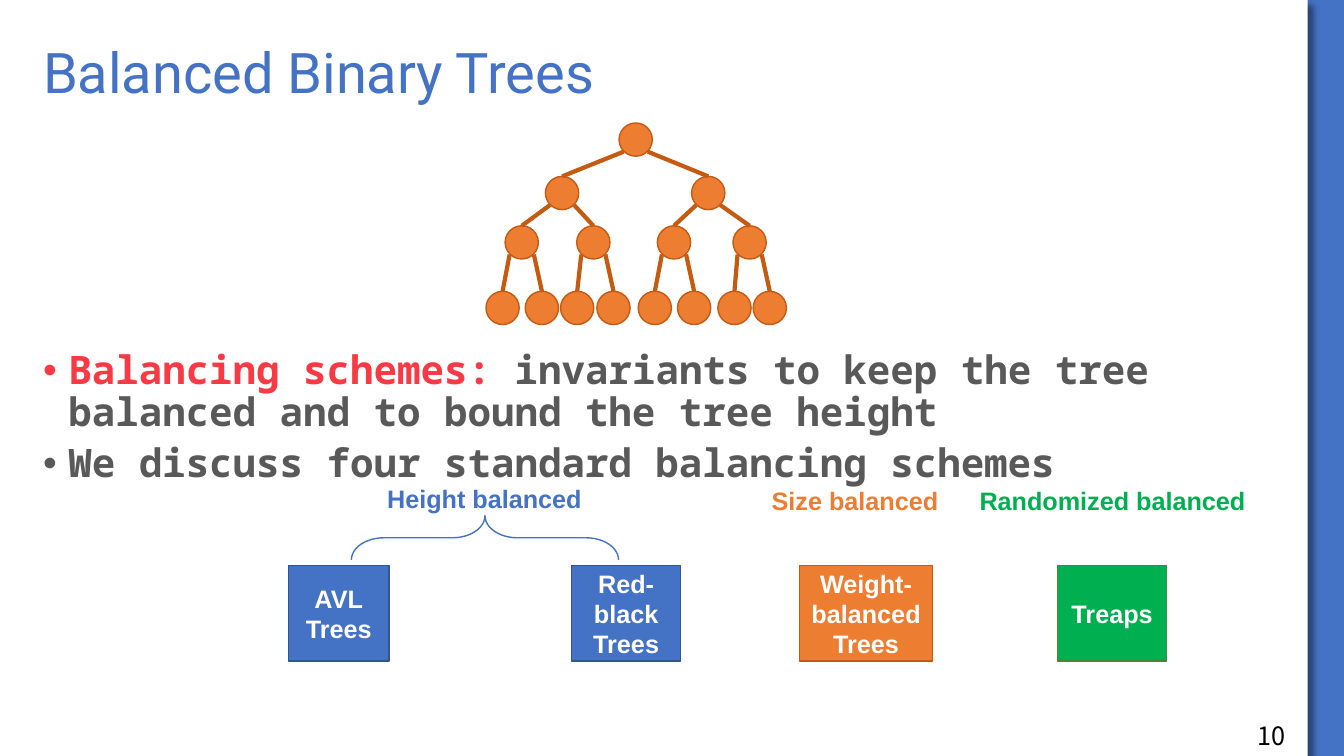
"""Build a slide on balanced binary trees and their balancing schemes."""
from dataclasses import dataclass

from lxml import etree
from pptx import Presentation
from pptx.dml.color import RGBColor
from pptx.enum.shapes import MSO_CONNECTOR as Link, MSO_SHAPE as Kind
from pptx.enum.text import MSO_ANCHOR as Anchor, PP_ALIGN as Align
from pptx.oxml.ns import qn
from pptx.util import Inches, Pt

BLUE, ORANGE, GREEN = "4472C4", "ED7D31", "00B050"
RUST, WHITE, RED, GRAY = "C55A11", "FFFFFF", "F93943", "595959"
NODE = 0.33
REACH = 0.12
BOX_TOP, BOX_TALL = 5.61, 0.95


@dataclass
class Level:
    top: float
    lefts: list[float]


@dataclass
class Scheme:
    text: str
    left: float
    width: float
    fill: str
    edge: str


@dataclass
class Label:
    text: str
    left: float
    top: float
    width: float
    height: float
    color: str
    size: int = 18
    face: str = "Arial"
    bold: bool = True
    align: Align = Align.CENTER
    anchor: Anchor = Anchor.TOP
    wrap: bool = True
    space: float = 1.0


LEVELS = [
    Level(1.22, [6.14]),
    Level(1.75, [5.41, 6.86]),
    Level(2.24, [5.01, 5.72, 6.52, 7.27]),
    Level(2.89, [4.82, 5.21, 5.56, 5.92, 6.33, 6.72, 7.12, 7.47]),
]
SCHEMES = [
    Scheme("AVL\nTrees", 2.86, 1, BLUE, "325491"),
    Scheme("Red-black Trees", 5.67, 1.08, BLUE, "325491"),
    Scheme("Weight-balanced Trees", 7.93, 1.32, ORANGE, RUST),
    Scheme("Treaps", 10.49, 1.08, GREEN, "548235"),
]
LABELS = [
    Label("Balanced Binary Trees", 0.33, 0.5, 12.33, 0.5, BLUE, 40, "Roboto",
          False, Align.LEFT, Anchor.MIDDLE, space=0.9),
    Label("10", 12.37, 7.1, 0.86, 0.4, "000000", 18, "Noto Sans CJK SC",
          False, Align.LEFT),
    Label("Height balanced", 3.62, 4.75, 2.37, 0.4, BLUE),
    Label("Size balanced", 7.54, 4.77, 1.88, 0.4, ORANGE, wrap=False),
    Label("Randomized balanced", 9.6, 4.77, 2.87, 0.4, GREEN, wrap=False),
]
POINTS = [
    [("Balancing schemes: ", RED),
     ("invariants to keep the tree balanced and to bound the tree height", GRAY)],
    [("We discuss four standard balancing schemes", GRAY)],
]


def rgb(code: str) -> RGBColor:
    return RGBColor.from_string(code)


def style(font, face: str, size: int, color: str, bold: bool) -> None:
    font.name, font.size, font.bold = face, Pt(size), bold
    font.color.rgb = rgb(color)


def shape(slide, kind: Kind, left: float, top: float, width: float,
          height: float, fill: str | None, edge: str | None):
    item = slide.shapes.add_shape(
        kind, Inches(left), Inches(top), Inches(width), Inches(height))
    item.shadow.inherit = False
    if fill:
        item.fill.solid()
        item.fill.fore_color.rgb = rgb(fill)
    else:
        item.fill.background()
    if edge:
        item.line.color.rgb = rgb(edge)
        item.line.width = Pt(1)
    else:
        item.line.fill.background()
    return item


def panel(slide) -> None:
    page = shape(slide, Kind.RECTANGLE, 0, 0, 12.97, 7.5, WHITE, None)
    glow = etree.SubElement(
        page._element.spPr.find(qn("a:effectLst")), qn("a:outerShdw"),
        blurRad=str(Pt(4)), dist=str(Pt(6)), dir=str(45 * 60000))
    tint = etree.SubElement(glow, qn("a:srgbClr"), val="000000")
    etree.SubElement(tint, qn("a:alpha"), val="40000")


def edge(slide, x1: float, y1: float, x2: float, y2: float) -> None:
    line = slide.shapes.add_connector(
        Link.STRAIGHT, Inches(x1), Inches(y1), Inches(x2), Inches(y2))
    line.line.color.rgb = rgb(RUST)
    line.line.width = Pt(3)
    etree.SubElement(line._element.spPr, qn("a:effectLst"))


def tree(slide) -> None:
    for level in LEVELS:
        for left in level.lefts:
            shape(slide, Kind.OVAL, left, level.top, NODE, NODE, ORANGE, RUST)
    half = NODE / 2
    for upper, lower in zip(LEVELS, LEVELS[1:]):
        for i, left in enumerate(lower.lefts):
            side = REACH if i % 2 else -REACH
            edge(slide, upper.lefts[i // 2] + half + side,
                 upper.top + half + REACH, left + half, lower.top)


def box(slide, item: Scheme) -> None:
    rect = shape(slide, Kind.RECTANGLE, item.left, BOX_TOP, item.width,
                 BOX_TALL, item.fill, item.edge)
    frame = rect.text_frame
    frame.text = item.text
    frame.word_wrap = True
    frame.vertical_anchor = Anchor.MIDDLE
    for para in frame.paragraphs:
        para.alignment = Align.CENTER
        style(para.font, "Arial", 18, WHITE, True)


def label(slide, item: Label) -> None:
    frame = slide.shapes.add_textbox(
        Inches(item.left), Inches(item.top),
        Inches(item.width), Inches(item.height)).text_frame
    frame.text = item.text
    frame.word_wrap = item.wrap
    frame.vertical_anchor = item.anchor
    para = frame.paragraphs[0]
    para.alignment = item.align
    para.line_spacing = item.space
    style(para.font, item.face, item.size, item.color, item.bold)


def body(slide) -> None:
    frame = slide.shapes.add_textbox(
        Inches(0.33), Inches(3.43), Inches(12.34), Inches(1.58)).text_frame
    frame.word_wrap = True
    for i, parts in enumerate(POINTS):
        para = frame.add_paragraph() if i else frame.paragraphs[0]
        para.line_spacing, para.space_before = 0.9, Pt(6)
        props = para._p.get_or_add_pPr()
        props.set("marL", str(Inches(0.25)))
        props.set("indent", str(Inches(-0.25)))
        etree.SubElement(props, qn("a:buFont"), typeface="Arial")
        etree.SubElement(props, qn("a:buChar"), char="•")
        for text, color in parts:
            run = para.add_run()
            run.text = text
            style(run.font, "Noto Sans Mono", 28, color, True)


def main() -> None:
    deck = Presentation()
    deck.slide_width, deck.slide_height = Inches(13.33), Inches(7.5)
    slide = deck.slides.add_slide(deck.slide_layouts[6])
    slide.background.fill.solid()
    slide.background.fill.fore_color.rgb = rgb(BLUE)
    panel(slide)
    body(slide)
    tree(slide)
    for item in SCHEMES:
        box(slide, item)
    brace = shape(slide, Kind.RIGHT_BRACE, 4.59, 4.01, 0.44, 2.65, None, BLUE)
    brace.rotation = 270
    brace.adjustments[0] = 0.73
    for item in LABELS:
        label(slide, item)
    deck.save("out.pptx")


if __name__ == "__main__":
    main()
